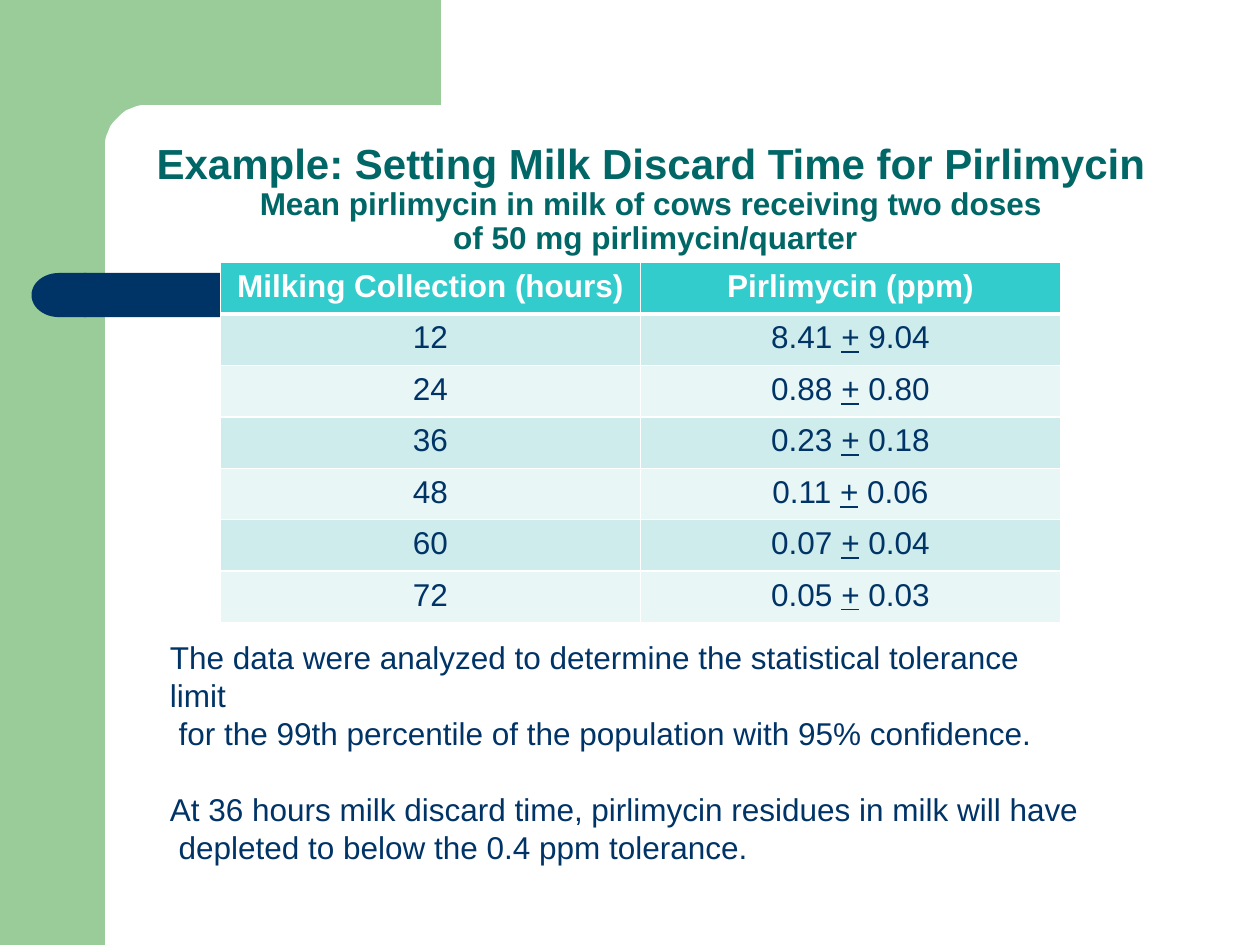
from dataclasses import dataclass
from math import cos, pi, sin

from lxml.etree import SubElement
from pptx import Presentation
from pptx.dml.color import RGBColor as Rgb
from pptx.enum.shapes import MSO_SHAPE as Shape
from pptx.enum.text import MSO_ANCHOR as Anchor, PP_ALIGN as Align
from pptx.oxml.ns import qn
from pptx.util import Pt

PX = 7620


@dataclass(frozen=True)
class Theme:
    """Colours, font and type sizes of the deck."""
    navy: str = "003366"
    green: str = "99CC99"
    teal: str = "006666"
    header: str = "33CCCC"
    bands: tuple = ("CEECEC", "E8F6F6")
    white: str = "FFFFFF"
    font: str = "Arial"
    heading: int = 24
    body: int = 18


THEME = Theme()

TITLE = "Example: Setting Milk Discard Time for Pirlimycin"
SUBTITLE = ("Mean pirlimycin in milk of cows receiving two doses",
            " of 50 mg pirlimycin/quarter")
HEADERS = ("Milking Collection (hours)", "Pirlimycin (ppm)")
RESIDUES = (
    ("12", "8.41", "9.04"),
    ("24", "0.88", "0.80"),
    ("36", "0.23", "0.18"),
    ("48", "0.11", "0.06"),
    ("60", "0.07", "0.04"),
    ("72", "0.05", "0.03"),
)
FINDINGS = (
    ("The data were analyzed to determine the statistical tolerance limit",
     " for the 99th percentile of the population with 95% confidence."),
    ("At 36 hours milk discard time, pirlimycin residues in milk will have",
     " depleted to below the 0.4 ppm tolerance."),
)


def scaled(*lengths):
    """Turn px lengths into EMU."""
    return [length * PX for length in lengths]


def style(run, color, size=THEME.body, bold=False):
    """Apply the deck font to a run."""
    font = run.font
    font.name, font.size, font.bold = THEME.font, Pt(size), bold
    font.color.rgb = Rgb.from_string(color)


def paint(shape, color):
    """Give a shape a flat fill without line or shadow."""
    shape.shadow.inherit = False
    shape.fill.solid()
    shape.fill.fore_color.rgb = Rgb.from_string(color)
    shape.line.fill.background()


def add_block(slide, kind, box, color):
    """Add a flat preset shape."""
    block = slide.shapes.add_shape(kind, *scaled(*box))
    paint(block, color)
    return block


def add_frame(slide, left, top, width, height):
    """Draw the green side band and the top band with its rounded inner corner."""
    side, band, radius, tail = 100, 100, 40, 14
    add_block(slide, Shape.RECTANGLE, (left, top, side, height), THEME.green)
    center_x, center_y = left + side + radius, top + band + radius
    steps = 12
    angles = [pi / 2 * step / steps for step in range(steps + 1)]
    curve = [(center_x - radius * sin(a), center_y - radius * cos(a)) for a in angles]
    inner, bottom = left + 60, center_y + tail
    outline = slide.shapes.build_freeform(left + width, top, scale=PX)
    outline.add_line_segments(
        [(left + width, top + band), *curve, (left + side, bottom),
         (inner, bottom), (inner, top)])
    paint(outline.convert_to_shape(), THEME.green)


def add_accent(slide, left, top, width, height):
    """Draw the navy bar with its round left end."""
    cap = 52
    add_block(slide, Shape.RECTANGLE, (left + 50, top, width - 50, height), THEME.navy)
    end = add_block(slide, Shape.FLOWCHART_DELAY, (left, top, cap, height), THEME.navy)
    end._element.spPr.get_or_add_xfrm().set("flipH", "1")


def add_title(slide, *box):
    """Place the heading and its two smaller lines at the bottom of the box."""
    frame = slide.shapes.add_textbox(*scaled(*box)).text_frame
    frame.word_wrap, frame.vertical_anchor = True, Anchor.BOTTOM
    frame.text = "\v".join((TITLE, *SUBTITLE))
    paragraph = frame.paragraphs[0]
    paragraph.alignment, paragraph.line_spacing = Align.CENTER, 0.9
    sizes = (THEME.heading, THEME.body, THEME.body)
    for run, size in zip(paragraph.runs, sizes):
        style(run, THEME.teal, size, bold=True)


def border_cell(cell, top=1, bottom=1):
    """Draw white borders around a cell, in points."""
    properties = cell._tc.get_or_add_tcPr()
    for side, points in (("L", 1), ("R", 1), ("T", top), ("B", bottom)):
        line = SubElement(properties, qn(f"a:ln{side}"), w=str(Pt(points)))
        fill = SubElement(line, qn("a:solidFill"))
        SubElement(fill, qn("a:srgbClr"), val=THEME.white)


def fill_cell(cell, pieces, fill, color, bold=False):
    """Write centred text pieces into a filled cell, underlining the plus sign."""
    cell.fill.solid()
    cell.fill.fore_color.rgb = Rgb.from_string(fill)
    paragraph = cell.text_frame.paragraphs[0]
    paragraph.alignment = Align.CENTER
    for piece in pieces:
        run = paragraph.add_run()
        run.text = piece
        style(run, color, bold=bold)
        run.font.underline = piece == "+"


def add_residue_table(slide, left, top, width, height):
    """Build the table of mean residue per milking."""
    rows = len(RESIDUES) + 1
    table = slide.shapes.add_table(
        rows, len(HEADERS), *scaled(left, top, width, height)).table
    table.horz_banding = False
    for row in table.rows:
        row.height = height // rows * PX
    for cell, header in zip(table.rows[0].cells, HEADERS):
        border_cell(cell, bottom=3)
        fill_cell(cell, (header,), THEME.header, THEME.white, bold=True)
    for index, (hours, mean, deviation) in enumerate(RESIDUES):
        contents = ((hours,), (f"{mean} ", "+", f" {deviation}"))
        for cell, pieces in zip(table.rows[index + 1].cells, contents):
            border_cell(cell, top=1 if index else 3)
            fill_cell(cell, pieces, THEME.bands[index % 2], THEME.navy)


def add_findings(slide, *box):
    """Place the conclusions below the table."""
    frame = slide.shapes.add_textbox(*scaled(*box)).text_frame
    frame.word_wrap, frame.vertical_anchor = False, Anchor.MIDDLE
    frame.text = "\n".join(line for finding in FINDINGS for line in finding)
    for paragraph in frame.paragraphs:
        style(paragraph.runs[0], THEME.navy)
    frame.paragraphs[len(FINDINGS[0])].space_before = Pt(22)


def main():
    """Build and save the slide."""
    deck = Presentation()
    deck.slide_width, deck.slide_height = scaled(1200, 900)
    slide = deck.slides.add_slide(deck.slide_layouts[6])
    add_frame(slide, 0, 0, 420, 900)
    add_accent(slide, 30, 260, 970, 42)
    add_findings(slide, 150, 620, 894, 192)
    add_residue_table(slide, 210, 250, 800, 343)
    add_title(slide, 100, 100, 1040, 150)
    deck.save("out.pptx")


if __name__ == "__main__":
    main()
